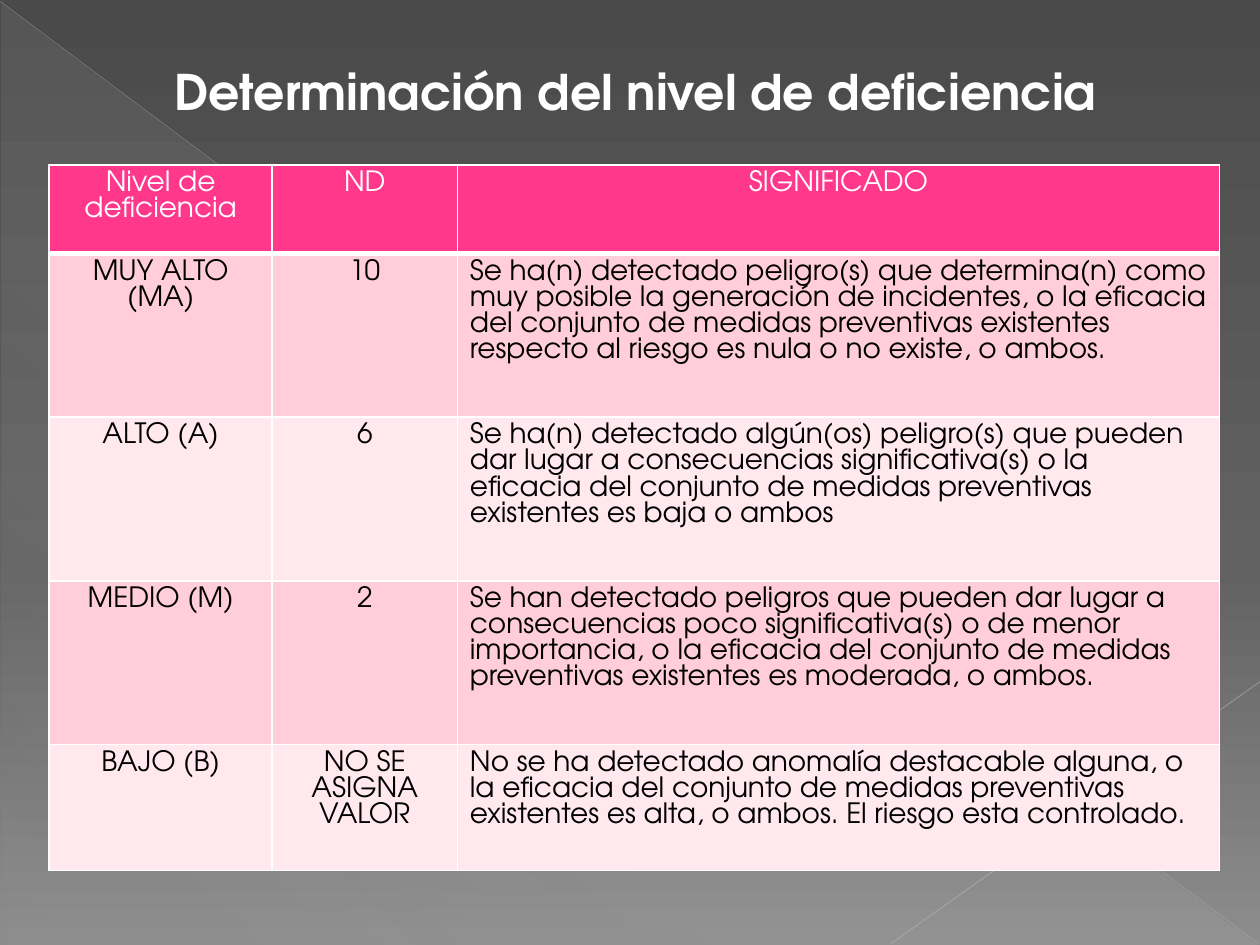
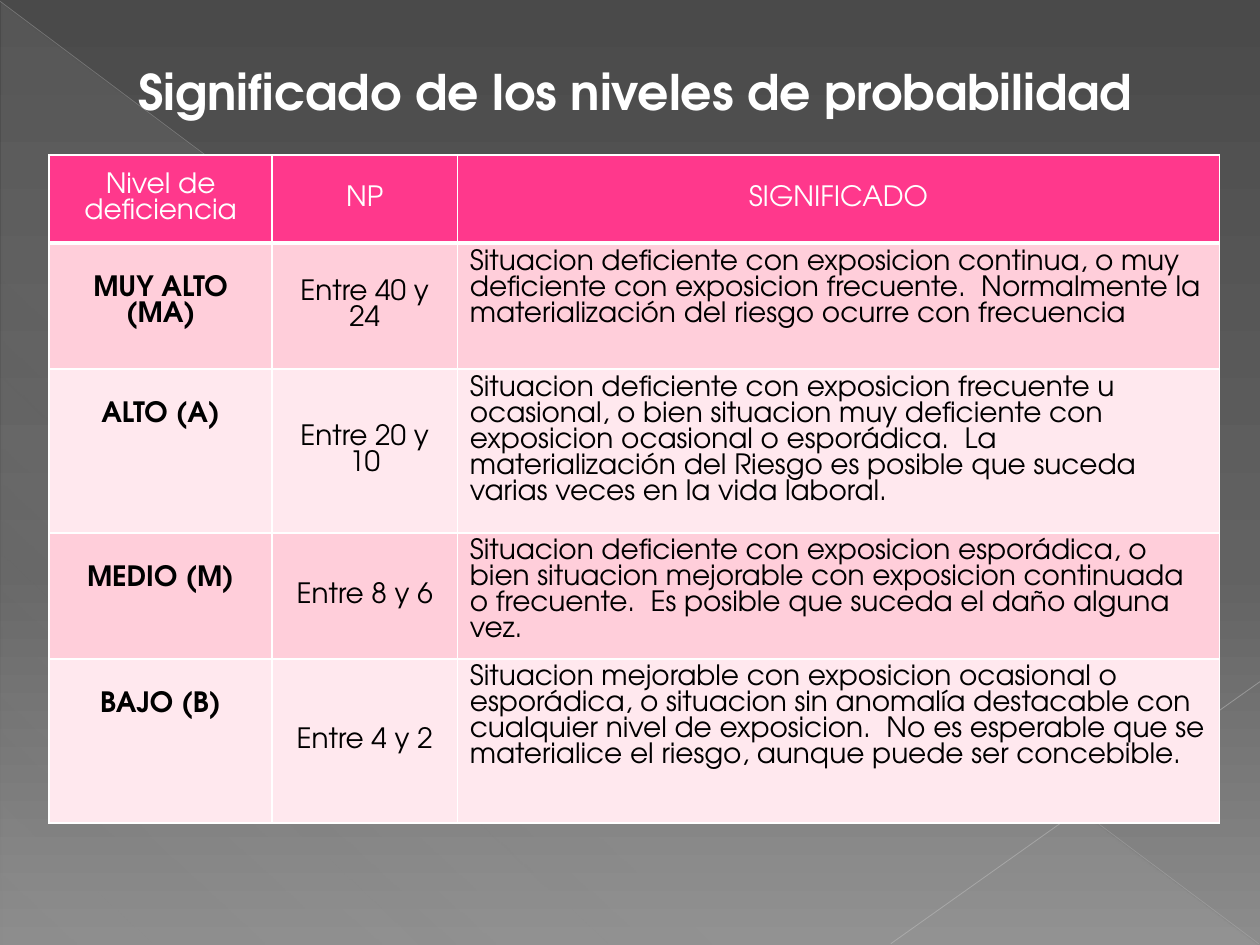
from dataclasses import dataclass
from lxml.etree import SubElement
from pptx import Presentation
from pptx.dml.color import RGBColor
from pptx.enum.shapes import MSO_CONNECTOR, MSO_SHAPE
from pptx.enum.text import MSO_ANCHOR, MSO_AUTO_SIZE, PP_ALIGN
from pptx.oxml.ns import qn
from pptx.util import Inches, Pt

PAGES = [
    {
        "title": "Determinación del nivel de deficiencia",
        "top": 1.31,
        "rows": [0.7, 1.3, 1.3, 1.3, 1],
        "mid": False,
        "drop": 0.05,
        "cells": [
            ("Nivel de deficiencia", "ND", "SIGNIFICADO"),
            ("MUY ALTO (MA)", "10", "Se ha(n) detectado peligro(s) que determina(n) como muy posible la generación de incidentes, o la eficacia del conjunto de medidas preventivas existentes respecto al riesgo es nula o no existe, o ambos."),
            ("ALTO (A)", "6", "Se ha(n) detectado algún(os) peligro(s) que pueden dar lugar a consecuencias significativa(s) o la eficacia del conjunto de medidas preventivas existentes es baja o ambos"),
            ("MEDIO (M)", "2", "Se han detectado peligros que pueden dar lugar a consecuencias poco significativa(s) o de menor importancia, o la eficacia del conjunto de medidas preventivas existentes es moderada, o ambos."),
            ("BAJO (B)", "NO SE ASIGNA VALOR", "No se ha detectado anomalía destacable alguna, o la eficacia del conjunto de medidas preventivas existentes es alta, o ambos. El riesgo esta controlado."),
        ],
    },
    {
        "title": "Significado de los niveles de probabilidad",
        "top": 1.23,
        "rows": [0.7, 1, 1.3, 1, 1.3],
        "mid": True,
        "drop": 0.26,
        "cells": [
            ("Nivel de deficiencia", "NP", "SIGNIFICADO"),
            ("MUY ALTO (MA)", "Entre 40 y 24", "Situacion deficiente con exposicion continua, o muy deficiente con exposicion frecuente.  Normalmente la materialización del riesgo ocurre con frecuencia"),
            ("ALTO (A)", "Entre 20 y 10", "Situacion deficiente con exposicion frecuente u ocasional, o bien situacion muy deficiente con exposicion ocasional o esporádica.  La materialización del Riesgo es posible que suceda varias veces en la vida laboral."),
            ("MEDIO (M)", "Entre 8 y 6", "Situacion deficiente con exposicion esporádica, o bien situacion mejorable con exposicion continuada o frecuente.  Es posible que suceda el daño alguna vez."),
            ("BAJO (B)", "Entre 4 y 2", "Situacion mejorable con exposicion ocasional o esporádica, o situacion sin anomalía destacable con cualquier nivel de exposicion.  No es esperable que se materialice el riesgo, aunque puede ser concebible."),
        ],
    },
]


@dataclass(frozen=True)
class Theme:
    font: str = "TeX Gyre Adventor"
    head: int = 28
    body: int = 16
    white: str = "FFFFFF"
    black: str = "000000"
    pink: str = "FF388C"
    bands: tuple = ("FFCEDA", "FFE8EE")
    back: tuple = ((0, "4A4A4A", 100), (60, "626262", 100), (100, "8C8C8C", 100))
    glow: tuple = ((0, "D2D2D2", 10), (70, "D2D2D2", 8), (100, "D2D2D2", 1))


THEME = Theme()
LINES = [
    ((0, 0.01, 9.99, 7.49), "BFBFBF", 0.39, 35),
    ((10, 5.41, 7.07, 7.49), "C6C6C6", 0.47, 45),
]
COLS = [1.77, 1.47, 6.05]
LEFT = 0.39


def put(item, **vals):
    for key, val in vals.items():
        setattr(item, key, val)


def fit(shape, box):
    names = ("left", "top", "width", "height")
    put(shape, **dict(zip(names, map(Inches, box))))


def write(frame, text, size, color, bold, align):
    frame.text = text
    para = frame.paragraphs[0]
    para.alignment = align
    font = para.runs[0].font
    put(font, name=THEME.font, size=Pt(size), bold=bold)
    font.color.rgb = RGBColor.from_string(color)


def fade(color, alpha):
    SubElement(color, qn("a:alpha"), val=str(alpha * 1000))


def blend(fill, owner, stops, angle):
    fill.gradient()
    grad = owner.find(".//" + qn("a:gradFill"))
    group = grad.find(qn("a:gsLst"))
    for old in list(group):
        group.remove(old)
    for pos, color, alpha in stops:
        stop = SubElement(group, qn("a:gs"), pos=str(pos * 1000))
        fade(SubElement(stop, qn("a:srgbClr"), val=color), alpha)
    grad.find(qn("a:lin")).set("ang", str(angle * 60000))


def dress(layout, slide):
    blend(layout.background.fill, layout.element, THEME.back, 90)
    wedge = slide.shapes.add_shape(
        MSO_SHAPE.RIGHT_TRIANGLE, *map(Inches, (0.01, 0.02, 9.98, 7.48)))
    wedge.shadow.inherit = False
    wedge.line.fill.background()
    blend(wedge.fill, wedge.element, THEME.glow, 133)
    parts = [wedge]
    for ends, color, width, alpha in LINES:
        line = slide.shapes.add_connector(
            MSO_CONNECTOR.STRAIGHT, *map(Inches, ends))
        line.line.width = Pt(width)
        line.line.color.rgb = RGBColor.from_string(color)
        props = line.element.spPr
        fade(props.find(".//" + qn("a:srgbClr")), alpha)
        SubElement(props, qn("a:effectLst"))
        parts.append(line)
    tree = layout.placeholders[0].element.getparent()
    for spot, part in enumerate(parts, 2):
        tree.insert(spot, part.element)


def edge(cell, base):
    props = cell._tc.get_or_add_tcPr()
    for side, width in (("L", 1), ("R", 1), ("T", 1), ("B", base)):
        line = SubElement(props, qn("a:ln" + side), w=str(Pt(width)))
        fill = SubElement(line, qn("a:solidFill"))
        SubElement(fill, qn("a:srgbClr"), val=THEME.white)


def grid(slide, page):
    rows = page["rows"]
    box = (LEFT, page["top"], sum(COLS), sum(rows))
    table = slide.shapes.add_table(
        len(rows), len(COLS), *map(Inches, box)).table
    table.horz_banding = False
    for col, width in zip(table.columns, COLS):
        col.width = Inches(width)
    for row, high in zip(table.rows, rows):
        row.height = Inches(high)
    for r, words in enumerate(page["cells"]):
        top = r == 0
        for c, text in enumerate(words):
            cell = table.cell(r, c)
            name = c == 0 and not top
            mid = page["mid"] and (top or c == 1)
            write(cell.text_frame, text, THEME.body,
                  THEME.white if top else THEME.black,
                  name and page["mid"],
                  PP_ALIGN.CENTER if top or c < 2 else PP_ALIGN.LEFT)
            put(cell,
                margin_top=Inches(page["drop"] if name else 0.05),
                vertical_anchor=MSO_ANCHOR.MIDDLE if mid else MSO_ANCHOR.TOP)
            edge(cell, 3 if top else 1)
            cell.fill.solid()
            shade = THEME.pink if top else THEME.bands[(r - 1) % 2]
            cell.fill.fore_color.rgb = RGBColor.from_string(shade)


def main():
    deck = Presentation()
    put(deck, slide_width=Inches(10), slide_height=Inches(7.5))
    layout = deck.slide_layouts[5]
    for num, page in enumerate(PAGES):
        slide = deck.slides.add_slide(layout)
        if num == 0:
            dress(layout, slide)
        title = slide.shapes.title
        fit(title, (0.59, 0.44, 8.9, 0.57))
        frame = title.text_frame
        put(frame, word_wrap=True, auto_size=MSO_AUTO_SIZE.NONE,
            vertical_anchor=MSO_ANCHOR.MIDDLE)
        write(frame, page["title"], THEME.head, THEME.white, True,
              PP_ALIGN.CENTER)
        grid(slide, page)
    deck.save("out.pptx")


if __name__ == "__main__":
    main()
